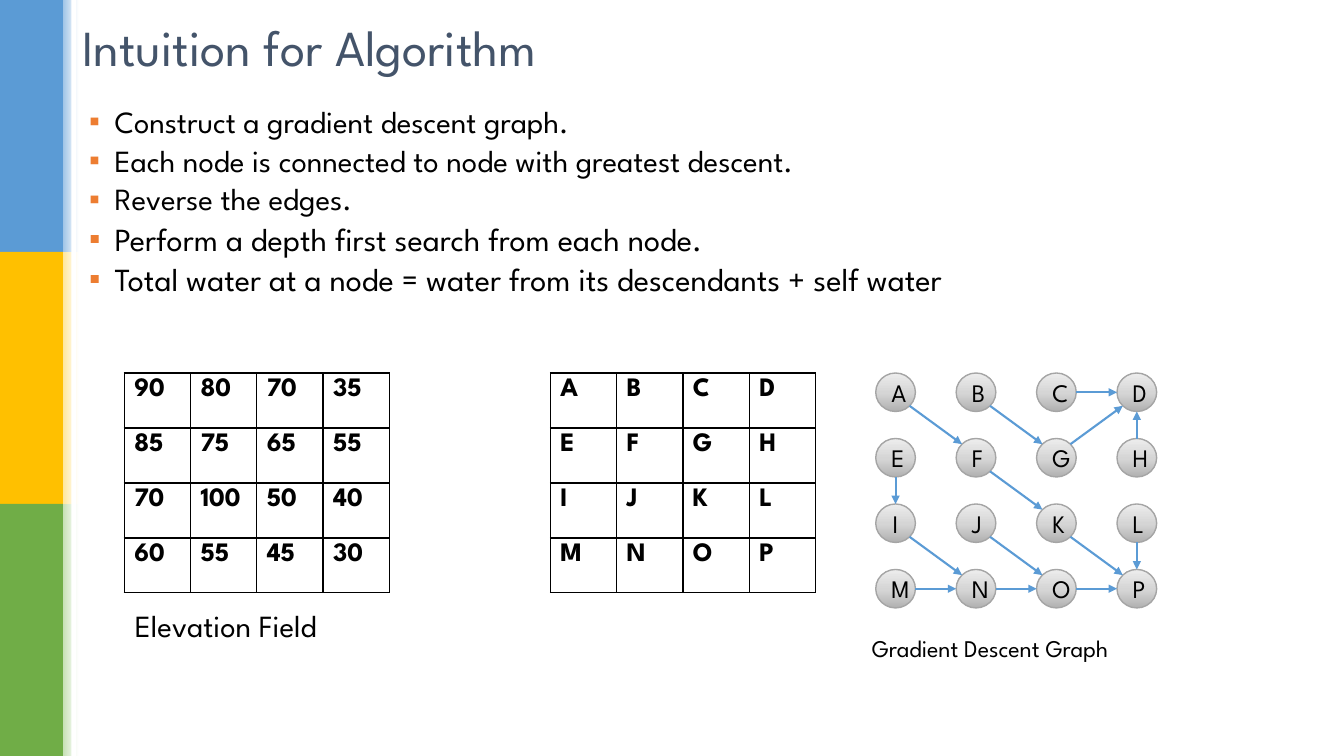
from math import sqrt

from lxml import etree
from pptx import Presentation
from pptx import util as u
from pptx.dml.color import RGBColor
from pptx.enum import shapes, text
from pptx.oxml import ns

COLORS = {
    "blue": "5B9BD5", "yellow": "FFC000", "green": "70AD47",
    "pale_blue": "9DC3E6", "pale_yellow": "FFE699", "pale_green": "C5E0B4",
    "white": "FFFFFF", "black": "000000", "title": "44546A", "bullet": "ED7D31",
    "node_dark": "B1B1B1", "node_mid": "D5D5D5", "node_light": "EDEDED",
    "node_line": "A5A5A5",
}
FONT = "League Spartan"
BULLETS = [
    ("Construct a gradient descent graph.", 22),
    ("Each node is connected to node with greatest descent.", 22),
    ("Reverse the edges.", 22),
    ("Perform a depth first search from each node.", 23),
    ("Total water at a node = water from its descendants + self water", 23),
]
ELEVATIONS = [[90, 80, 70, 35], [85, 75, 65, 55], [70, 100, 50, 40], [60, 55, 45, 30]]
NAMES = ["ABCD", "EFGH", "IJKL", "MNOP"]
EDGES = "AF FK KP MN NO OP BG GD CD HD EI IN JO LP".split()


def rgb(name):
    return RGBColor.from_string(COLORS[name])


def add_element(parent, tag, **attributes):
    return etree.SubElement(parent, ns.qn(tag), attributes)


def write(paragraph, content, size, color="black", bold=False, align=None,
          line_spacing=None, space_before=0, bullet=None):
    """Fill one paragraph with formatted text."""
    paragraph.line_spacing = line_spacing
    paragraph.space_before = u.Pt(space_before)
    paragraph.alignment = align
    if bullet:
        properties = paragraph._p.get_or_add_pPr()
        indent = u.Cm(0.64)
        properties.set("marL", str(indent))
        properties.set("indent", str(-indent))
        bullet_color = add_element(properties, "a:buClr")
        add_element(bullet_color, "a:srgbClr", val=COLORS["bullet"])
        add_element(properties, "a:buFont", typeface="Arial")
        add_element(properties, "a:buChar", char=bullet)
    run = paragraph.add_run()
    run.text = content
    run.font.name = FONT
    run.font.size = u.Pt(size)
    run.font.bold = bold
    run.font.color.rgb = rgb(color)


def add_text_frame(slide, left, top, width, height):
    box = slide.shapes.add_textbox(u.Cm(left), u.Cm(top), u.Cm(width), u.Cm(height))
    box.text_frame.word_wrap = True
    return box.text_frame


def add_filled(slide, kind, left, top, width, height, colors, angle=0):
    """Add a shape with one colour, or a gradient of (percent, colour) stops."""
    shape = slide.shapes.add_shape(kind, u.Cm(left), u.Cm(top), u.Cm(width), u.Cm(height))
    shape.shadow.inherit = False
    shape.line.fill.background()
    if isinstance(colors, str):
        shape.fill.solid()
        shape.fill.fore_color.rgb = rgb(colors)
        return shape
    shape.fill.gradient()
    gradient = shape._element.spPr.find(ns.qn("a:gradFill"))
    for child in list(gradient):
        gradient.remove(child)
    stops = add_element(gradient, "a:gsLst")
    for percent, name in colors:
        stop = add_element(stops, "a:gs", pos=str(percent * 1000))
        add_element(stop, "a:srgbClr", val=COLORS[name])
    add_element(gradient, "a:lin", ang=str(angle * 60000), scaled="0")
    return shape


def add_side_bar(slide, left, top, width, height):
    rectangle = shapes.MSO_SHAPE.RECTANGLE
    band_height = height / 3
    band_width = 0.8 * width
    for index, name in enumerate(["blue", "yellow", "green"]):
        band_top = top + index * band_height
        add_filled(slide, rectangle, left, band_top, band_width, band_height, name)
        add_filled(slide, rectangle, left + band_width, band_top, width - band_width,
                   band_height, [(0, "pale_" + name), (100, "white")])
    add_filled(slide, rectangle, left + width - 0.18, top, 0.12, height, "white")


def add_title(slide, left, top, width, height):
    frame = add_text_frame(slide, left, top, width, height)
    frame.vertical_anchor = text.MSO_ANCHOR.MIDDLE
    write(frame.paragraphs[0], "Intuition for Algorithm", size=36, color="title",
          line_spacing=0.9)


def add_bullets(slide, left, top, width, height):
    frame = add_text_frame(slide, left, top, width, height)
    for index, (content, size) in enumerate(BULLETS):
        paragraph = frame.add_paragraph() if index else frame.paragraphs[0]
        write(paragraph, content, size=size, line_spacing=0.8,
              space_before=0.3 * size if index else 0, bullet="▪")


def add_caption(slide, left, top, width, height, content, size, line_spacing):
    frame = add_text_frame(slide, left, top, width, height)
    write(frame.paragraphs[0], content, size=size, line_spacing=line_spacing)


def add_grid(slide, left, top, width, height, rows):
    table = slide.shapes.add_table(len(rows), len(rows[0]), u.Cm(left), u.Cm(top),
                                   u.Cm(width), u.Cm(height)).table
    table.first_row = table.horz_banding = False
    for row_index, row in enumerate(rows):
        for column_index, value in enumerate(row):
            cell = table.cell(row_index, column_index)
            properties = cell._tc.get_or_add_tcPr()
            for side in "LRTB":
                border = add_element(properties, "a:ln" + side, w=str(u.Pt(1)))
                fill = add_element(border, "a:solidFill")
                add_element(fill, "a:srgbClr", val=COLORS["black"])
            cell.fill.solid()
            cell.fill.fore_color.rgb = rgb("white")
            write(cell.text_frame.paragraphs[0], str(value), size=19, bold=True)


def add_arrow(slide, start, end):
    connector = slide.shapes.add_connector(
        shapes.MSO_CONNECTOR.STRAIGHT, *(u.Cm(value) for value in (*start, *end)))
    connector.line.color.rgb = rgb("blue")
    connector.line.width = u.Pt(1.5)
    add_element(connector.line._get_or_add_ln(), "a:tailEnd", type="triangle")
    add_element(connector._element.spPr, "a:effectLst")


def add_graph(slide, left, top, width, height):
    node_width, node_height = 1, 0.97
    step_x = (width - node_width) / 3
    step_y = (height - node_height) / 3
    places = {}
    # Nodes
    for row, names in enumerate(NAMES):
        for column, name in enumerate(names):
            node = add_filled(slide, shapes.MSO_SHAPE.OVAL, left + column * step_x,
                              top + row * step_y, node_width, node_height,
                              [(0, "node_dark"), (48, "node_mid"), (100, "node_light")],
                              angle=270)
            node.line.color.rgb = rgb("node_line")
            node.line.width = u.Pt(1)
            node.text_frame.word_wrap = True
            node.text_frame.vertical_anchor = text.MSO_ANCHOR.MIDDLE
            write(node.text_frame.paragraphs[0], name, size=18, align=text.PP_ALIGN.CENTER)
            places[name] = (column, row)
    # Arrows from rim to rim
    for source, target in EDGES:
        (column, row), (end_column, end_row) = places[source], places[target]
        across, down = end_column - column, end_row - row
        reach = 0.5 / sqrt(across ** 2 + down ** 2)
        offset_x, offset_y = across * reach * node_width, down * reach * node_height
        center_x, center_y = left + node_width / 2, top + node_height / 2
        add_arrow(slide,
                  (center_x + column * step_x + offset_x, center_y + row * step_y + offset_y),
                  (center_x + end_column * step_x - offset_x,
                   center_y + end_row * step_y - offset_y))


def main():
    presentation = Presentation()
    presentation.slide_width, presentation.slide_height = u.Cm(33.87), u.Cm(19.05)
    slide = presentation.slides.add_slide(presentation.slide_layouts[6])
    add_side_bar(slide, 0, 0, 1.98, 19.05)
    add_title(slide, 1.83, 0.2, 26.62, 2.13)
    add_bullets(slide, 2, 2.64, 30.18, 5.36)
    add_grid(slide, 3.13, 9.4, 6.68, 5.54, ELEVATIONS)
    add_caption(slide, 3.15, 15.27, 7.19, 1.09, "Elevation Field", 22, 0.9)
    add_grid(slide, 13.87, 9.4, 6.68, 5.54, NAMES)
    add_graph(slide, 22.07, 9.4, 7.08, 5.92)
    add_caption(slide, 21.72, 16.03, 7.77, 1.09, "Gradient Descent Graph", 17.1, 0.7)
    presentation.save("out.pptx")


if __name__ == "__main__":
    main()
